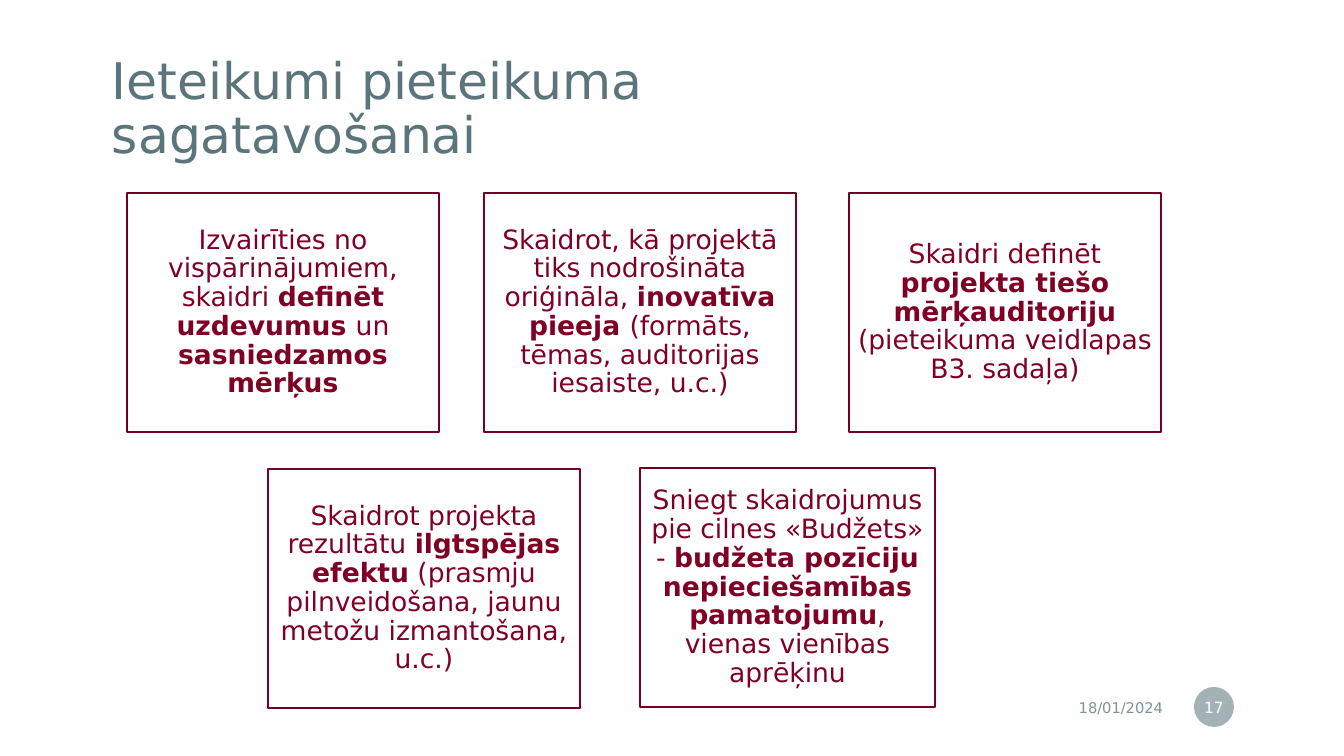
from lxml import etree
from pptx import Presentation
from pptx.dml.color import RGBColor
from pptx.enum.shapes import MSO_SHAPE
from pptx.enum.text import MSO_ANCHOR, MSO_AUTO_SIZE, PP_ALIGN
from pptx.oxml.ns import qn
from pptx.util import Pt

RECTANGLE, OVAL = MSO_SHAPE.RECTANGLE, MSO_SHAPE.OVAL
MIDDLE, NO_FIT = MSO_ANCHOR.MIDDLE, MSO_AUTO_SIZE.NONE
LEFT, CENTER, RIGHT = PP_ALIGN.LEFT, PP_ALIGN.CENTER, PP_ALIGN.RIGHT

WHITE = RGBColor(0xFF, 0xFF, 0xFF)
TITLE_SLATE = RGBColor(0x5B, 0x75, 0x7A)
FOOTER_GREY = RGBColor(0x7C, 0x93, 0x96)
BORDER_WINE = RGBColor(0x74, 0x00, 0x21)
TEXT_WINE = RGBColor(0x80, 0x00, 0x24)

FONT = "DejaVu Sans"
EMU_PER_PX = 914400 / 100.8
TITLE_ONLY_LAYOUT = 5


def px(length):
    return round(length * EMU_PER_PX)


class SlideBuilder:
    """Holds the text style and the slide being built."""

    def __init__(self, presentation):
        self.slide = presentation.slides.add_slide(
            presentation.slide_layouts[TITLE_ONLY_LAYOUT])

    def set_text(self, shape, runs, size, color, align, inset=(10, 5), spacing=1.0):
        """Fill a shape with one paragraph of (text, bold) runs."""
        frame = shape.text_frame
        frame.word_wrap = True
        frame.auto_size = NO_FIT
        frame.vertical_anchor = MIDDLE
        frame.margin_left = frame.margin_right = px(inset[0])
        frame.margin_top = frame.margin_bottom = px(inset[1])
        paragraph = frame.paragraphs[0]
        paragraph.alignment = align
        paragraph.line_spacing = spacing
        for text, bold in runs:
            run = paragraph.add_run()
            run.text = text
            run.font.name = FONT
            run.font.size = Pt(size)
            run.font.bold = bold
            run.font.color.rgb = color

    def title(self, text, left, top, width, height):
        shape = self.slide.shapes.title
        shape.left, shape.top = px(left), px(top)
        shape.width, shape.height = px(width), px(height)
        self.set_text(shape, [(text, False)], 36, TITLE_SLATE, LEFT, (20, 20), 0.9)

    def date(self, text, left, top, width, height):
        shape = self.slide.shapes.add_textbox(px(left), px(top), px(width), px(height))
        self.set_text(shape, [(text, False)], 10.5, FOOTER_GREY, RIGHT)

    def filled_shape(self, kind, left, top, width, height, fill):
        shape = self.slide.shapes.add_shape(kind, px(left), px(top), px(width), px(height))
        shape.shadow.inherit = False
        shape.fill.solid()
        shape.fill.fore_color.rgb = fill
        return shape

    def page_number(self, text, left, top, diameter):
        shape = self.filled_shape(OVAL, left, top, diameter, diameter, FOOTER_GREY)
        shape.line.fill.background()
        color = shape.element.spPr.find(qn("a:solidFill"))[0]
        etree.SubElement(color, qn("a:alpha")).set("val", "70000")
        self.set_text(shape, [(text, False)], 11, WHITE, CENTER, (2, 5))

    def card(self, runs, left, top, width, height):
        shape = self.filled_shape(RECTANGLE, left, top, width, height, WHITE)
        shape.line.color.rgb = BORDER_WINE
        shape.line.width = Pt(1)
        self.set_text(shape, runs, 19, TEXT_WINE, CENTER, (8, 8), 0.9)


CARD_HEIGHT = 239

# Left, top, width and text runs of each recommendation
CARDS = [
    (127, 193, 312, [
        ("Izvairīties no vispārinājumiem, skaidri ", False),
        ("definēt uzdevumus ", True),
        ("un ", False),
        ("sasniedzamos mērķus", True)]),
    (484, 193, 312, [
        ("Skaidrot, kā projektā tiks nodrošināta oriģināla, ", False),
        ("inovatīva pieeja ", True),
        ("(formāts, tēmas, auditorijas iesaiste, u.c.)", False)]),
    (849, 193, 312, [
        ("Skaidri definēt ", False),
        ("projekta tiešo mērķauditoriju ", True),
        ("(pieteikuma veidlapas B3. sadaļa)", False)]),
    (268, 469, 312, [
        ("Skaidrot projekta rezultātu ", False),
        ("ilgtspējas efektu", True),
        (" (prasmju pilnveidošana, jaunu metožu izmantošana, u.c.)", False)]),
    (640, 468, 295, [
        ("Sniegt skaidrojumus pie cilnes «Budžets» - ", False),
        ("budžeta pozīciju nepieciešamības pamatojumu", True),
        (", vienas vienības aprēķinu", False)]),
]


def main():
    presentation = Presentation()
    presentation.slide_width = px(1344)
    presentation.slide_height = px(756)
    builder = SlideBuilder(presentation)

    # Title
    builder.title("Ieteikumi pieteikuma sagatavošanai", 92, 48, 880, 124)

    # Footer
    builder.date("18/01/2024", 870, 690, 303, 35)
    builder.page_number("17", 1194, 687, 40)

    # Recommendation cards
    for left, top, width, runs in CARDS:
        builder.card(runs, left, top, width, CARD_HEIGHT)

    presentation.save("out.pptx")


if __name__ == "__main__":
    main()
